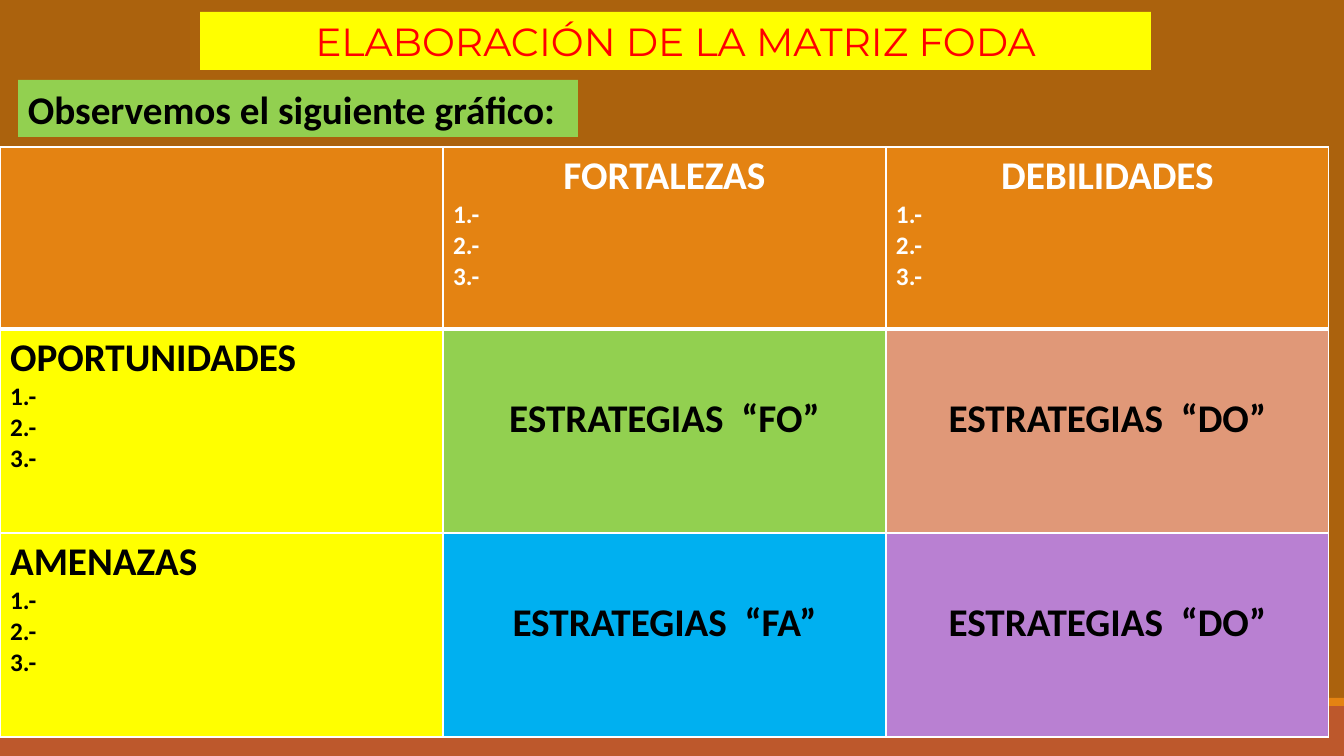
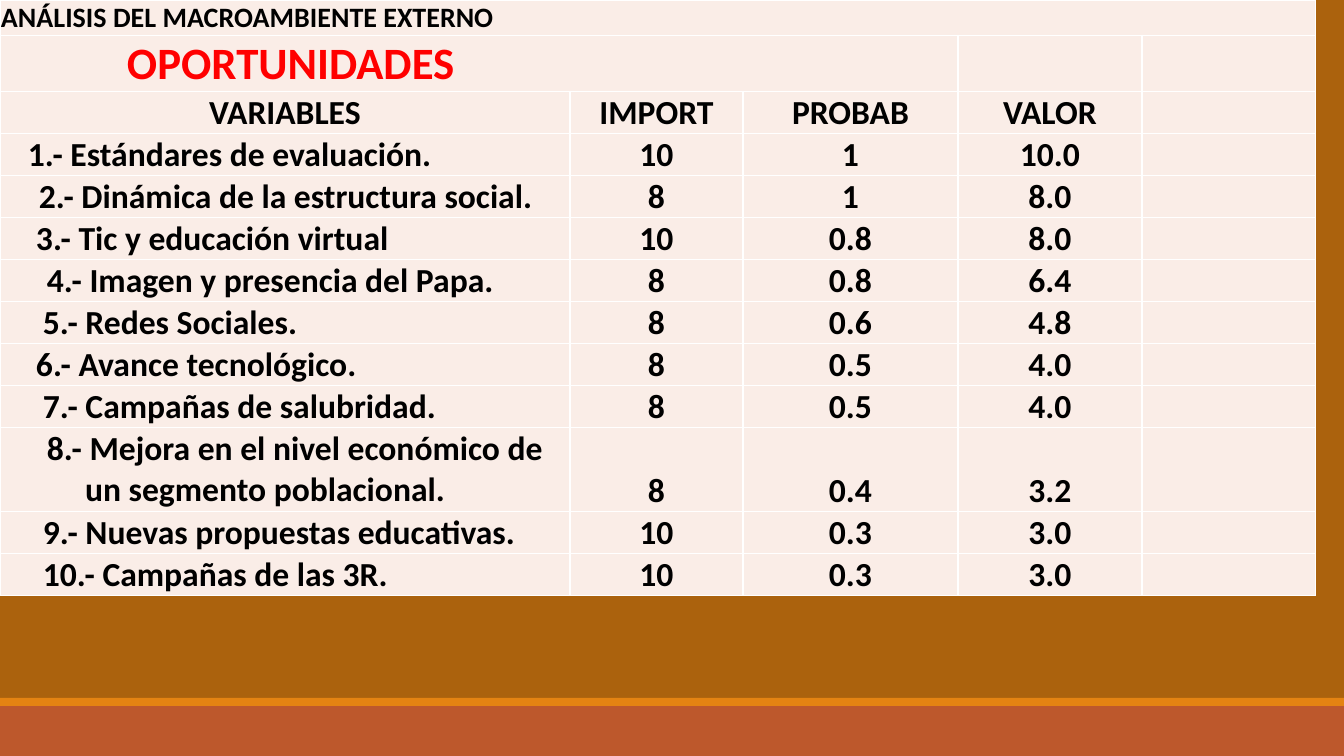
"""Build two slides on the FODA matrix and the external environment analysis."""
import pptx
import pptx.dml.color
import pptx.enum.shapes
import pptx.enum.text
import pptx.oxml
import pptx.oxml.ns
import pptx.util

RGB = pptx.dml.color.RGBColor
ALIGN = pptx.enum.text.PP_ALIGN
ANCHOR = pptx.enum.text.MSO_ANCHOR
RECT = pptx.enum.shapes.MSO_SHAPE.RECTANGLE

WIDTH, HEIGHT = 1344, 756
SCALE = 12192000 / WIDTH

BROWN = RGB(0xAB, 0x62, 0x0D)
RUST = RGB(0xBD, 0x58, 0x2C)
ORANGE = RGB(0xE4, 0x83, 0x12)
YELLOW = RGB(0xFF, 0xFF, 0x00)
GREEN = RGB(0x92, 0xD0, 0x50)
SALMON = RGB(0xE0, 0x98, 0x78)
BLUE = RGB(0x00, 0xB0, 0xF0)
PURPLE = RGB(0xB9, 0x80, 0xD2)
CREAM = RGB(0xFA, 0xED, 0xE7)
RED = RGB(0xFF, 0x00, 0x00)
BLACK = RGB(0x00, 0x00, 0x00)
WHITE = RGB(0xFF, 0xFF, 0xFF)

HEADING = {"name": "Calibri", "size": pptx.util.Pt(28), "bold": True}
ITEM = {**HEADING, "size": pptx.util.Pt(18)}
SECTION = {**HEADING, "size": pptx.util.Pt(20)}
FACTOR = {**HEADING, "size": pptx.util.Pt(32)}
DATA = {**HEADING, "size": pptx.util.Pt(24)}
TITLE = {"name": "Montserrat", "size": pptx.util.Pt(28), "bold": False}

ITEMS = ["1.-", "2.-", "3.-"]
STRATEGIES = [
    ("OPORTUNIDADES", [("ESTRATEGIAS  “FO”", GREEN), ("ESTRATEGIAS  “DO”", SALMON)]),
    ("AMENAZAS", [("ESTRATEGIAS  “FA”", BLUE), ("ESTRATEGIAS  “DO”", PURPLE)]),
]
HEADERS = ["VARIABLES", "IMPORT", "PROBAB", "VALOR"]
OPPORTUNITIES = [
    (28, ["1.- Estándares de evaluación."], "10", "1", "10.0"),
    (39, ["2.- Dinámica de la estructura social."], "8", "1", "8.0"),
    (36, ["3.- Tic y educación virtual"], "10", "0.8", "8.0"),
    (47, ["4.- Imagen y presencia del Papa."], "8", "0.8", "6.4"),
    (43, ["5.- Redes Sociales."], "8", "0.6", "4.8"),
    (36, ["6.- Avance tecnológico."], "8", "0.5", "4.0"),
    (43, ["7.- Campañas de salubridad."], "8", "0.5", "4.0"),
    (47, ["8.- Mejora en el nivel económico de", "un segmento poblacional."],
     "8", "0.4", "3.2"),
    (43, ["9.- Nuevas propuestas educativas."], "10", "0.3", "3.0"),
    (43, ["10.- Campañas de las 3R."], "10", "0.3", "3.0"),
]


def px(n):
    return pptx.util.Emu(round(n * SCALE))


def apply(obj, values):
    for name, value in values.items():
        setattr(obj, name, value)


def place(sp, x, y, w, h):
    apply(sp, {"left": px(x), "top": px(y), "width": px(w), "height": px(h)})


def paint(obj, color):
    obj.fill.solid()
    obj.fill.fore_color.rgb = color


def add_line(tf, text, fmt, color=BLACK, align=ALIGN.LEFT, indent=0):
    p = tf.paragraphs[0] if not tf.text else tf.add_paragraph()
    p.alignment = align
    if indent:
        p._p.get_or_add_pPr().set("marL", str(px(indent)))
    r = p.add_run()
    r.text = text
    apply(r.font, fmt)
    r.font.color.rgb = color


def add_rect(slide, x, y, w, h, color):
    sp = slide.shapes.add_shape(RECT, px(x), px(y), px(w), px(h))
    sp.shadow.inherit = False
    sp.line.fill.background()
    paint(sp, color)
    return sp


def set_borders(cell, bottom=1):
    tcPr = cell._tc.get_or_add_tcPr()
    for i, (side, pt) in enumerate({"L": 1, "R": 1, "T": 1, "B": bottom}.items()):
        tcPr.insert(i, pptx.oxml.parse_xml(
            f'<a:ln{side} {pptx.oxml.ns.nsdecls("a")} w="{pptx.util.Pt(pt)}">'
            f'<a:solidFill><a:srgbClr val="{WHITE}"/></a:solidFill></a:ln{side}>'))


def add_table(slide, x, y, cols, rows):
    frame = slide.shapes.add_table(
        len(rows), len(cols), px(x), px(y), px(sum(cols)), px(sum(rows)))
    table = frame.table
    apply(table, {"first_row": False, "horz_banding": False})
    for col, w in zip(table.columns, cols):
        col.width = px(w)
    for row, h in zip(table.rows, rows):
        row.height = px(h)
    return table


def fill_list(cell, heading, fill, color, align=ALIGN.LEFT):
    paint(cell, fill)
    add_line(cell.text_frame, heading, HEADING, color, align)
    for item in ITEMS:
        add_line(cell.text_frame, item, ITEM, color)


def style_master(prs):
    """Put the background and the footer bands on the master."""
    master = prs.slide_master
    paint(master.background, BROWN)
    slide = prs.slides.add_slide(prs.slide_layouts[5])
    for y, h, color in [(706, 50, RUST), (698, 8, ORANGE)]:
        band = add_rect(slide, 0, y, WIDTH, h, color)
        master.shapes._spTree.insert_element_before(band._element, "p:extLst")
    return slide


def build_matrix(slide):
    title = slide.shapes.title
    place(title, 200, 12, 951, 58)
    paint(title, YELLOW)
    apply(title.text_frame, {"auto_size": pptx.enum.text.MSO_AUTO_SIZE.NONE,
                             "vertical_anchor": ANCHOR.MIDDLE})
    add_line(title.text_frame, "ELABORACIÓN DE LA MATRIZ FODA", TITLE, RED, ALIGN.CENTER)
    label = add_rect(slide, 18, 80, 560, 57, GREEN)
    add_line(label.text_frame, "Observemos el siguiente gráfico:", HEADING)

    table = add_table(slide, 0, 147, [443] * 3, [182, 204, 204])
    paint(table.cell(0, 0), ORANGE)
    for c, heading in enumerate(["FORTALEZAS", "DEBILIDADES"], 1):
        fill_list(table.cell(0, c), heading, ORANGE, WHITE, ALIGN.CENTER)
    for r, (heading, strategies) in enumerate(STRATEGIES, 1):
        fill_list(table.cell(r, 0), heading, YELLOW, BLACK)
        for c, (text, color) in enumerate(strategies, 1):
            cell = table.cell(r, c)
            paint(cell, color)
            cell.margin_top = px(66)
            add_line(cell.text_frame, text, HEADING, align=ALIGN.CENTER)
    for i, cell in enumerate(table.iter_cells()):
        set_borders(cell, 3 if i < 3 else 1)


def build_analysis(slide):
    rows = [35, 56, 42] + [42 * len(lines) for _, lines, *_ in OPPORTUNITIES]
    table = add_table(slide, 0, 0, [570, 173, 215, 184, 174], rows)
    for cell in table.iter_cells():
        paint(cell, CREAM)
        set_borders(cell)
        apply(cell, {"margin_left": px(1), "margin_right": px(1), "margin_top": px(1),
                     "margin_bottom": 0, "vertical_anchor": ANCHOR.BOTTOM})
    table.cell(0, 0).merge(table.cell(0, 4))
    table.cell(1, 0).merge(table.cell(1, 2))
    add_line(table.cell(0, 0).text_frame, "ANÁLISIS DEL MACROAMBIENTE EXTERNO", SECTION)
    table.cell(1, 0).margin_left = px(127)
    add_line(table.cell(1, 0).text_frame, "OPORTUNIDADES", FACTOR, RED)
    for c, text in enumerate(HEADERS):
        add_line(table.cell(2, c).text_frame, text, DATA, align=ALIGN.CENTER)
    for r, (left, lines, *values) in enumerate(OPPORTUNITIES, 3):
        variable = table.cell(r, 0)
        apply(variable, {"margin_left": px(left), "vertical_anchor": ANCHOR.MIDDLE})
        for i, text in enumerate(lines):
            add_line(variable.text_frame, text, DATA, indent=38 * i)
        for c, text in enumerate(values, 1):
            add_line(table.cell(r, c).text_frame, text, DATA, align=ALIGN.CENTER)


def main():
    prs = pptx.Presentation()
    apply(prs, {"slide_width": px(WIDTH), "slide_height": px(HEIGHT)})
    build_matrix(style_master(prs))
    build_analysis(prs.slides.add_slide(prs.slide_layouts[6]))
    prs.save("out.pptx")


if __name__ == "__main__":
    main()
